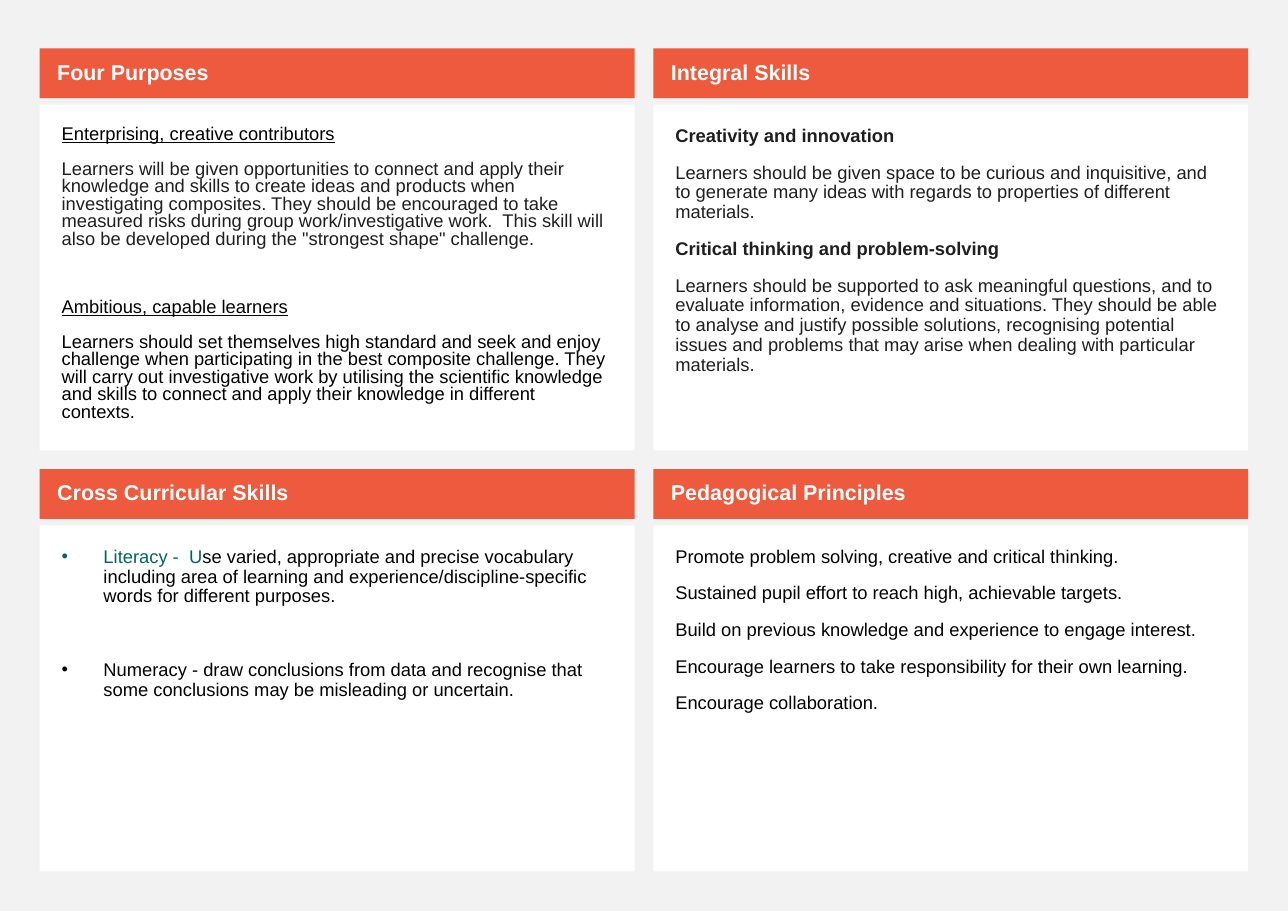
from pptx import Presentation
from pptx.dml.color import RGBColor
from pptx.enum.shapes import MSO_SHAPE
from pptx.enum.text import MSO_ANCHOR, PP_ALIGN
from pptx.util import Inches, Pt
from lxml import etree

RECT = MSO_SHAPE.RECTANGLE
TOP, MIDDLE = MSO_ANCHOR.TOP, MSO_ANCHOR.MIDDLE
LEFT = PP_ALIGN.LEFT

ORANGE, WHITE, GREY = "ED5A3E", "FFFFFF", "F2F2F2"
BLACK, DARK, GREEN = "000000", "1F1F1F", "006758"

GRID_X, GRID_Y = 0.36, 0.44
COL_PITCH, ROW_PITCH = 5.57, 3.82
CARD_W, HEAD_H, BODY_H, BODY_DROP = 5.4, 0.45, 3.14, 0.51
BULLET_INDENT = 0.38


def rgb(color):
    return RGBColor.from_string(color)


def add_block(box, fill, insets, anchor, size, spacing, paragraphs):
    """Add a filled rectangle; a paragraph is (space before, bulleted, runs)."""
    sp = slide.shapes.add_shape(RECT, *(Inches(v) for v in box))
    sp.shadow.inherit = False
    sp.fill.solid()
    sp.fill.fore_color.rgb = rgb(fill)
    sp.line.fill.background()
    tf = sp.text_frame
    tf.word_wrap = True
    tf.vertical_anchor = anchor
    tf.margin_left, tf.margin_top, tf.margin_right, tf.margin_bottom = (
        Inches(v) for v in insets)
    for i, (before, bulleted, runs) in enumerate(paragraphs):
        p = tf.add_paragraph() if i else tf.paragraphs[0]
        p.alignment = LEFT
        p.line_spacing = spacing
        p.space_before = Pt(before)
        if bulleted:
            pPr = p._p.get_or_add_pPr()
            pPr.set("marL", str(Inches(BULLET_INDENT)))
            pPr.set("indent", str(-Inches(BULLET_INDENT)))
            ns = pPr.nsmap["a"]
            etree.SubElement(pPr, f"{{{ns}}}buFont", typeface="Arial")
            etree.SubElement(pPr, f"{{{ns}}}buChar", char="•")
        for text, color, style in runs:
            r = p.add_run()
            r.text = text
            r.font.name = "Arial"
            r.font.size = Pt(size)
            r.font.color.rgb = rgb(color)
            r.font.bold = style == "bold"
            r.font.underline = style == "underline"


# Title, column, row, line spacing, paragraphs
cards = [
    ("Four Purposes", 0, 0, 0.8, [
        (11, False, [("Enterprising, creative contributors", BLACK, "underline")]),
        (11, False, [(
            "Learners will be given opportunities to connect and apply their "
            "knowledge and skills to create ideas and "
            "products when investigating composites. They should be "
            "encouraged to take measured risks during group work/investigative "
            "work.  This skill will also be developed during the \"strongest "
            "shape\" challenge.", DARK, "")]),
        (33, False, [("Ambitious, capable learners", BLACK, "underline")]),
        (11, False, [(
            "Learners should set themselves high standard and seek and enjoy "
            "challenge when participating in the best composite challenge. They "
            "will carry out investigative work by utilising the scientific knowledge "
            "and skills to connect and apply their knowledge in different "
            "contexts.", BLACK, "")]),
    ]),
    ("Integral Skills", 1, 0, 0.9, [
        (11, False, [("Creativity and innovation", DARK, "bold")]),
        (11, False, [(
            "Learners should be given space to be curious and inquisitive, and "
            "to generate many ideas with regards to properties of different "
            "materials.", DARK, "")]),
        (11, False, [("Critical thinking and problem-solving", DARK, "bold")]),
        (11, False, [(
            "Learners should be supported to ask meaningful questions, and to "
            "evaluate information, evidence and situations. They should be able "
            "to analyse and justify possible solutions, recognising potential "
            "issues and problems that may arise when dealing with particular "
            "materials.", DARK, "")]),
    ]),
    ("Cross Curricular Skills", 0, 1, 0.9, [
        (11, True, [
            ("Literacy -  U", GREEN, ""),
            ("se varied, appropriate and precise vocabulary "
             "including area of learning and experience/discipline-specific "
             "words for different purposes.", BLACK, "")]),
        (35, True, [(
            "Numeracy - draw conclusions from data and recognise that "
            "some conclusions may be misleading or uncertain.", BLACK, "")]),
    ]),
    ("Pedagogical Principles", 1, 1, 0.9, [
        (11, False, [(principle, BLACK, "")]) for principle in (
            "Promote problem solving, creative and critical thinking.",
            "Sustained pupil effort to reach high, achievable targets.",
            "Build on previous knowledge and experience to engage interest.",
            "Encourage learners to take responsibility for their own learning.",
            "Encourage collaboration.")
    ]),
]

prs = Presentation()
prs.slide_width, prs.slide_height = Inches(11.69), Inches(8.27)
slide = prs.slides.add_slide(prs.slide_layouts[6])
slide.background.fill.solid()
slide.background.fill.fore_color.rgb = rgb(GREY)

for title, col, row, spacing, paragraphs in cards:
    x = GRID_X + col * COL_PITCH
    y = GRID_Y + row * ROW_PITCH
    add_block((x, y, CARD_W, HEAD_H), ORANGE, (0.16, 0.05, 0.1, 0.05),
              MIDDLE, 14, 0.9, [(11, False, [(title, WHITE, "bold")])])
    add_block((x, y + BODY_DROP, CARD_W, BODY_H), WHITE, (0.2, 0.2, 0.2, 0.2),
              TOP, 12, spacing, paragraphs)

prs.save("out.pptx")
